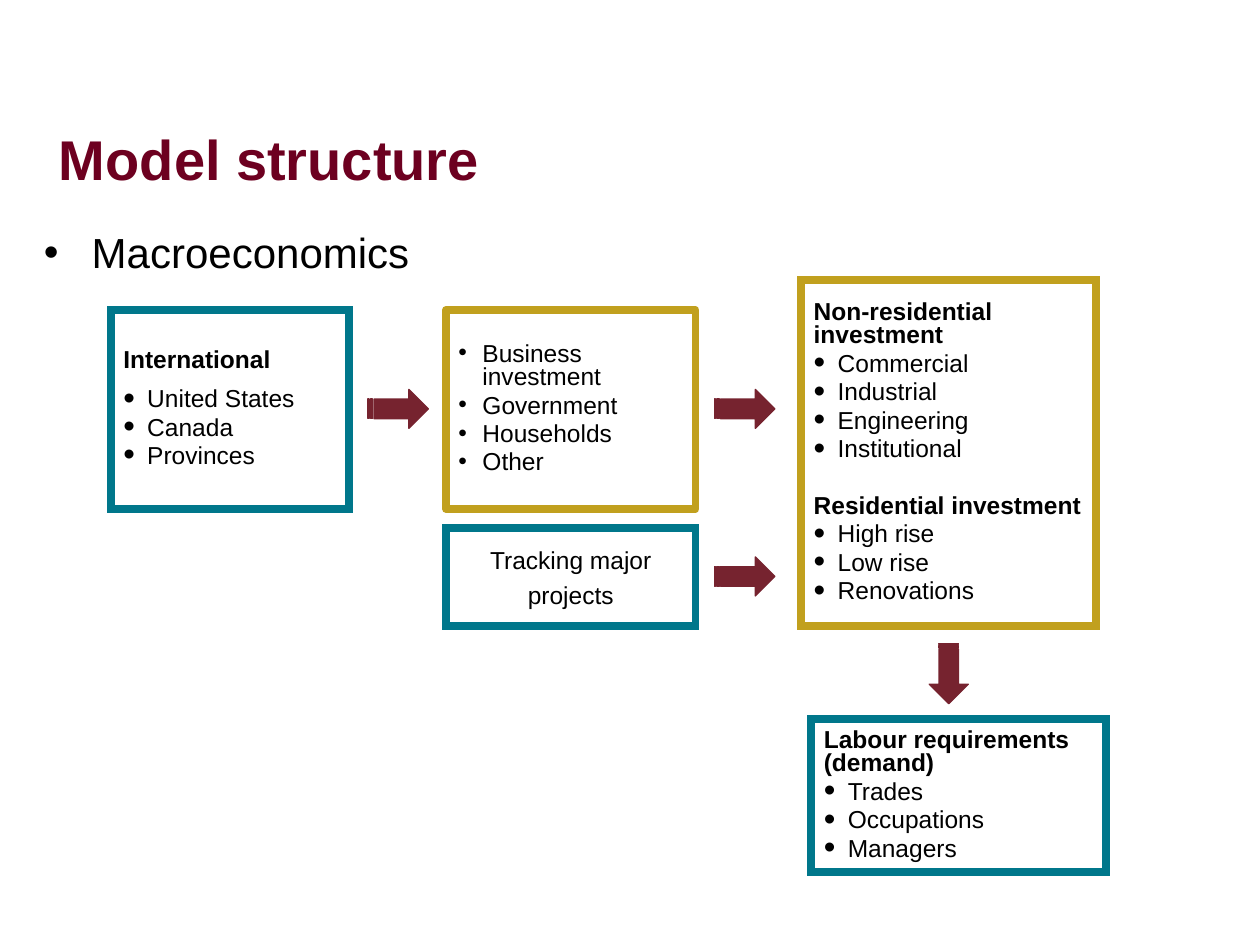
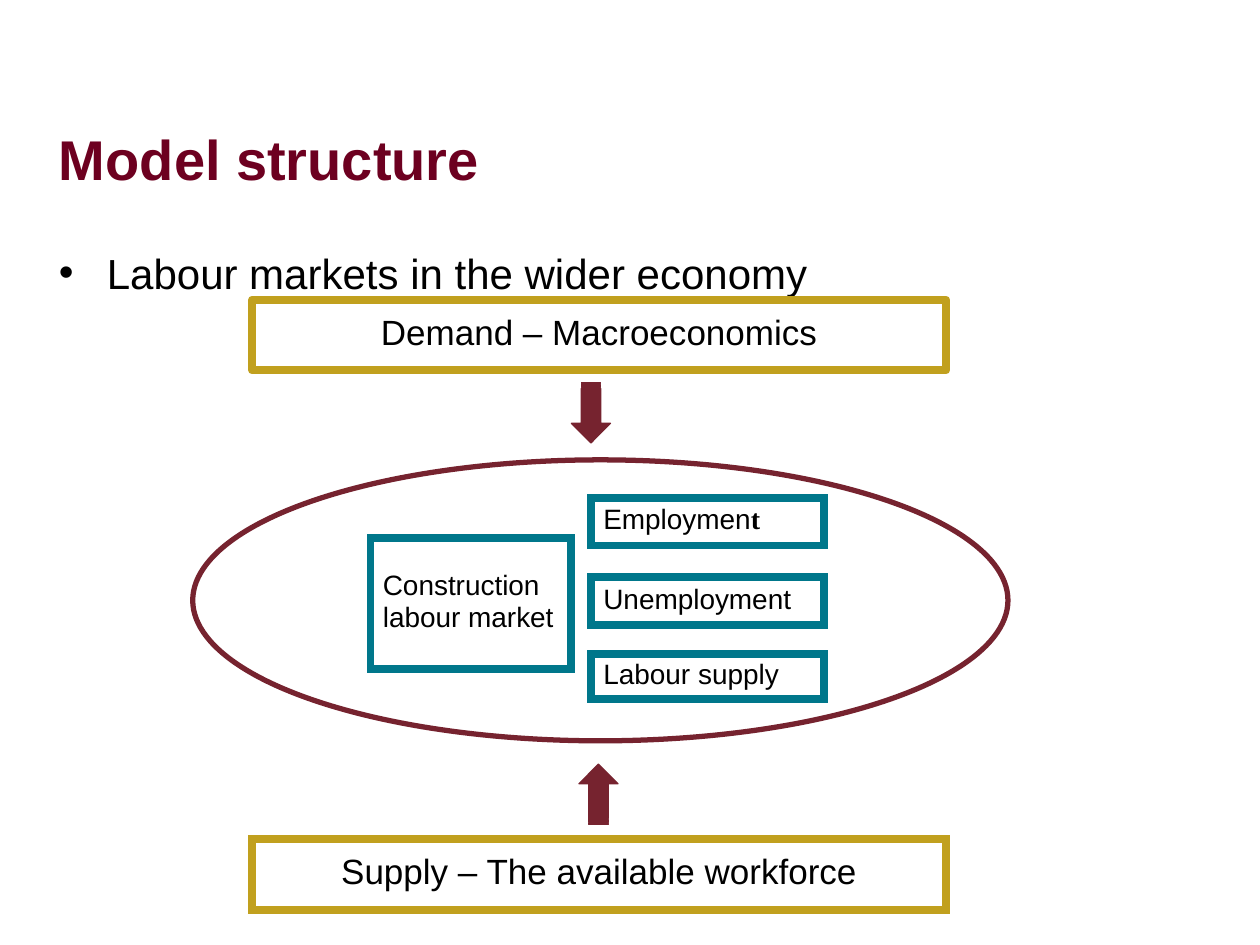
"""Build the two model structure slides."""
from dataclasses import dataclass

from lxml.etree import SubElement
from pptx import Presentation
from pptx.dml.color import RGBColor
from pptx.enum.shapes import MSO_SHAPE
from pptx.enum.text import MSO_ANCHOR, PP_ALIGN
from pptx.oxml.ns import qn
from pptx.util import Inches, Pt

COLS, ROWS = 100, 75


@dataclass(frozen=True)
class Theme:
    """Colours, fonts and type sizes shared by the slides."""
    font: str = "Arial"
    accent_font: str = "Times New Roman"
    title: RGBColor = RGBColor(0x6D, 0x00, 0x20)
    text: RGBColor = RGBColor(0, 0, 0)
    paper: RGBColor = RGBColor(0xFF, 0xFF, 0xFF)
    teal: RGBColor = RGBColor(0x00, 0x77, 0x8B)
    gold: RGBColor = RGBColor(0xC1, 0xA0, 0x1E)
    maroon: RGBColor = RGBColor(0x76, 0x23, 0x2F)
    title_size: int = 32
    body_size: int = 24
    band_size: int = 20
    market_size: int = 16
    list_size: int = 14
    tight: float = 0.8
    hang: float = 0.19


class Deck:
    """Hold the theme and the current slide, and draw elements on a grid."""

    def __init__(self, theme):
        """Open a presentation of the right size."""
        self.t = theme
        self.prs = Presentation()
        self.prs.slide_width, self.prs.slide_height = Inches(10), Inches(7.5)

    def frame(self, x, y, w, h):
        """Turn columns and rows into slide lengths."""
        col, row = self.prs.slide_width / COLS, self.prs.slide_height / ROWS
        return int(x * col), int(y * row), int(w * col), int(h * row)

    def slide(self, title, topic, x, y):
        """Start a slide with its title and bulleted topic."""
        self.s = self.prs.slides.add_slide(self.prs.slide_layouts[6])
        tf = self.textbox(3.7, 6.3, 90, 12.5)
        tf.vertical_anchor = MSO_ANCHOR.MIDDLE
        self.para(tf, title, self.t.title_size, bold=True, color=self.t.title)
        tf = self.textbox(x, y, 90, 49.5)
        tf.margin_top = Inches(0.09)
        self.para(tf, topic, self.t.body_size, bullet=100, hang=0.38)

    def textbox(self, *grid):
        """Add a wrapping text box and return its text frame."""
        tf = self.s.shapes.add_textbox(*self.frame(*grid)).text_frame
        tf.word_wrap = True
        return tf

    def shape(self, kind, grid, line, width, fill=None):
        """Add a preset shape with an outline and an optional fill."""
        sp = self.s.shapes.add_shape(kind, *self.frame(*grid))
        sp.shadow.inherit = False
        if fill is None:
            sp.fill.background()
        else:
            sp.fill.solid()
            sp.fill.fore_color.rgb = fill
        sp.line.color.rgb = line
        sp.line.width = Pt(width)
        return sp

    def box(self, grid, line, rounded=False):
        """Add an outlined box and return its text frame."""
        sp = self.shape(MSO_SHAPE.RECTANGLE, grid, line, 4.5, self.t.paper)
        ln = sp.line.fill._xPr
        SubElement(ln, qn("a:round" if rounded else "a:miter"))
        tf = sp.text_frame
        tf.word_wrap = True
        tf.vertical_anchor = MSO_ANCHOR.MIDDLE
        return tf

    def arrow(self, x, y, rotation=0):
        """Add a striped arrow turned by the given angle."""
        sp = self.shape(MSO_SHAPE.STRIPED_RIGHT_ARROW, (x, y, 4.8, 3.1),
                        self.t.maroon, 0.75, self.t.maroon)
        sp.rotation = rotation

    def ellipse(self, *grid):
        """Add an open ellipse."""
        self.shape(MSO_SHAPE.OVAL, grid, self.t.maroon, 3)

    def para(self, tf, text, size, bold=False, color=None, bullet=0, hang=0,
             spacing=1.0, align=PP_ALIGN.LEFT, gap=None):
        """Write the next paragraph, bulleted at a percentage if asked."""
        first = not tf.text
        p = tf.paragraphs[0] if first else tf.add_paragraph()
        p.text = text
        p.alignment = align
        p.line_spacing = spacing
        if not first:
            p.space_before = Pt(size * 0.2 if gap is None else gap)
        if bullet:
            pPr = p._p.get_or_add_pPr()
            pPr.set("marL", str(Inches(hang)))
            pPr.set("indent", str(-Inches(hang)))
            SubElement(pPr, qn("a:buSzPct"), val=str(bullet * 1000))
            SubElement(pPr, qn("a:buFont"), typeface=self.t.font)
            SubElement(pPr, qn("a:buChar"), char="•")
        for r in p.runs:
            self.style(r, size, bold, color)
        return p

    def style(self, r, size, bold=False, color=None, font=None):
        """Format one run."""
        r.font.name = font or self.t.font
        r.font.size = Pt(size)
        r.font.bold = bold
        r.font.color.rgb = color or self.t.text

    def group(self, tf, heading, items, bullet=135, gap=None):
        """Write an optional bold heading and the bullets below it."""
        t = self.t
        p = None
        if heading:
            p = self.para(tf, heading, t.list_size, bold=True,
                          spacing=t.tight, gap=gap)
        for item in items:
            self.para(tf, item, t.list_size, bullet=bullet, hang=t.hang,
                      spacing=t.tight)
        return p

    def lines(self, tf, texts, size, **options):
        """Write plain paragraphs and return the last one."""
        for text in texts:
            p = self.para(tf, text, size, **options)
        return p


def macroeconomics(d):
    """Draw the flow from the world economy to labour demand."""
    t = d.t
    d.slide("Model structure", "Macroeconomics", 2.5, 17.1)
    tf = d.box((8.8, 24.6, 18.9, 15.8), t.teal)
    heading = d.group(tf, "International",
                      ["United States", "Canada", "Provinces"])
    heading.space_after = Pt(6)
    tf = d.box((35.4, 24.6, 19.8, 15.8), t.gold, rounded=True)
    d.group(tf, None, ["Business investment", "Government", "Households",
                       "Other"], bullet=100)
    tf = d.box((63.6, 22.2, 23.4, 27.5), t.gold)
    d.group(tf, "Non-residential investment",
            ["Commercial", "Industrial", "Engineering", "Institutional"])
    d.group(tf, "Residential investment",
            ["High rise", "Low rise", "Renovations"], gap=19)
    tf = d.box((35.4, 41.9, 19.8, 7.8), t.teal)
    d.lines(tf, ["Tracking major", "projects"], t.list_size,
            align=PP_ALIGN.CENTER)
    tf = d.box((64.4, 57.1, 23.4, 12.1), t.teal)
    d.group(tf, "Labour requirements (demand)",
            ["Trades", "Occupations", "Managers"])
    for x, y, rotation in ((29.2, 30.9, 0), (56.7, 30.9, 0),
                           (56.7, 44.2, 0), (72.9, 51.9, 90)):
        d.arrow(x, y, rotation)


def labour_markets(d):
    """Draw the labour market between demand and supply."""
    t = d.t
    d.slide("Model structure", "Labour markets in the wider economy",
            3.7, 18.7)
    for y, text, rounded in ((23.8, "Demand – Macroeconomics", True),
                             (66.6, "Supply – The available workforce", False)):
        tf = d.box((20, y, 55.1, 5.6), t.gold, rounded)
        d.lines(tf, [text], t.band_size, spacing=t.tight,
                align=PP_ALIGN.CENTER)
    d.arrow(44.5, 31.2, 90)
    d.ellipse(15.3, 36.5, 64.7, 22.3)
    d.arrow(45.1, 61.5, 270)
    for grid, texts, accent in (
            ((29.4, 42.7, 15.9, 10.4), ["Construction", "labour market"], ""),
            ((46.9, 39.5, 18.5, 3.8), ["Employmen"], "t"),
            ((46.9, 45.8, 18.5, 3.8), ["Unemployment"], ""),
            ((46.9, 51.9, 18.5, 3.6), ["Labour supply"], "")):
        tf = d.box(grid, t.teal)
        p = d.lines(tf, texts, t.market_size, spacing=t.tight)
        if accent:
            r = p.add_run()
            r.text = accent
            d.style(r, t.market_size, bold=True, font=t.accent_font)


def main():
    """Build and save the deck."""
    d = Deck(Theme())
    macroeconomics(d)
    labour_markets(d)
    d.prs.save("out.pptx")


if __name__ == "__main__":
    main()
